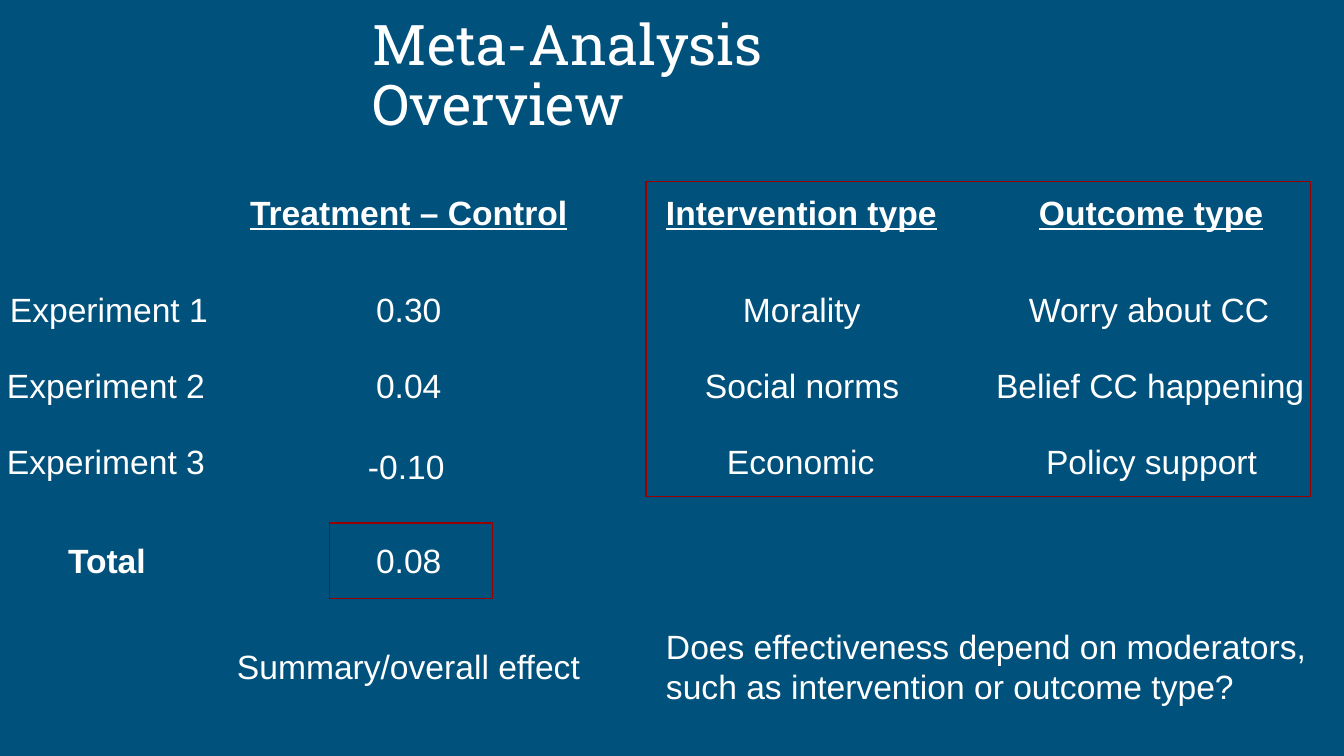
from pptx import Presentation
from pptx.dml.color import RGBColor
from pptx.enum.shapes import MSO_SHAPE as SHAPE
from pptx.enum.text import MSO_ANCHOR as ANCHOR, MSO_AUTO_SIZE as AUTO_SIZE
from pptx.util import Pt

PX = 914400 / 100.8  # EMU per px
NAVY = RGBColor(0x00, 0x51, 0x7C)
WHITE = RGBColor(0xFF, 0xFF, 0xFF)
RED = RGBColor(0x98, 0x00, 0x00)


def emu(*lengths):
    return [round(length * PX) for length in lengths]


def add_text(text, left, top, width, height=61, size=24, font="Arial",
             heading=False, bold=False, inset=10):
    box = slide.shapes.add_textbox(*emu(left, top, width, height))
    frame = box.text_frame
    frame.word_wrap = True
    frame.auto_size = AUTO_SIZE.SHAPE_TO_FIT_TEXT
    frame.margin_left, frame.margin_right = emu(10, 10)
    frame.margin_top, frame.margin_bottom = emu(inset, inset)
    run = frame.paragraphs[0].add_run()
    run.text = text
    run.font.name = font
    run.font.size = Pt(size)
    run.font.color.rgb = WHITE
    run.font.bold = bold or heading
    run.font.underline = heading
    return frame


prs = Presentation()
prs.slide_width, prs.slide_height = emu(1344, 756)
slide = prs.slides.add_slide(prs.slide_layouts[6])
slide.background.fill.solid()
slide.background.fill.fore_color.rgb = NAVY

# Title
title = add_text("Meta-Analysis Overview", 363, 25, 618, 105, size=40,
                 font="Roboto Slab", inset=5)
title.auto_size = AUTO_SIZE.NONE
title.vertical_anchor = ANCHOR.MIDDLE
title.paragraphs[0].line_spacing = 0.9

# Column headings: text, left, width
HEADING_TOP = 182
headings = [
    ("Treatment – Control", 240, 343),
    ("Intervention type", 656, 298),
    ("Outcome type", 1029, 256),
]
for heading, left, width in headings:
    add_text(heading, left, HEADING_TOP, width, heading=True)

# Experiments, one row each: text, left, width
FIRST_ROW, ROW_STEP = 279, 76
experiments = [
    [("Experiment 1", 0, 222), ("0.30", 366, 91),
     ("Morality", 733, 145), ("Worry about CC", 1019, 274)],
    [("Experiment 2", -3, 228), ("0.04", 366, 91),
     ("Social norms", 695, 222), ("Belief CC happening", 986, 343)],
    [("Experiment 3", -3, 228), ("-0.10", 358, 106),
     ("Economic", 717, 176), ("Policy support", 1036, 241)],
]
for row, cells in enumerate(experiments):
    for text, left, width in cells:
        nudge = 5 if text == "-0.10" else 0
        add_text(text, left, FIRST_ROW + row * ROW_STEP + nudge, width)

# Total and its summary
TOTAL_TOP = 530
add_text("Total", 58, TOTAL_TOP, 106, bold=True)
add_text("0.08", 366, TOTAL_TOP, 91)
add_text("Summary/overall effect", 227, 636, 369)

# Question on moderators
add_text("Does effectiveness depend on moderators, such as intervention or "
         "outcome type?", 656, 616, 665, 102)

# Frames around the total and the moderators
for bounds in [(330, 523, 163, 76), (646, 182, 665, 315)]:
    frame = slide.shapes.add_shape(SHAPE.RECTANGLE, *emu(*bounds))
    frame.shadow.inherit = False
    frame.fill.background()
    frame.line.color.rgb = RED
    frame.line.width = Pt(0.75)

prs.save("out.pptx")
